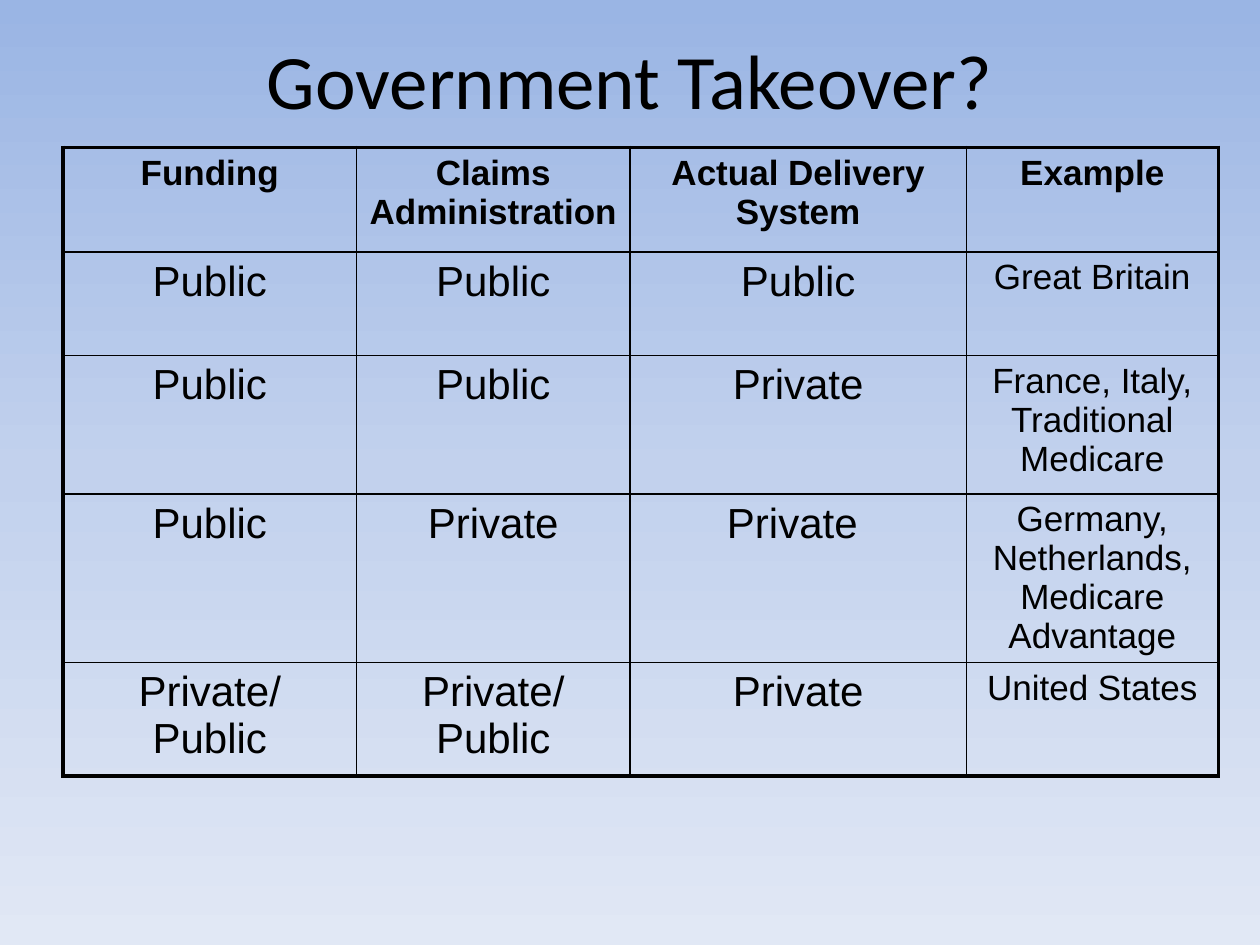
from copy import deepcopy
from typing import NamedTuple

from lxml.etree import SubElement
from pptx import Presentation
from pptx.dml.color import RGBColor
from pptx.enum.text import MSO_ANCHOR, PP_ALIGN
from pptx.oxml.ns import qn
from pptx.util import Inches, Pt

BLACK = RGBColor(0x00, 0x00, 0x00)
SKY = [
    (0.0, RGBColor(0x9A, 0xB5, 0xE4)),
    (0.5, RGBColor(0xC2, 0xD1, 0xED)),
    (1.0, RGBColor(0xE1, 0xE8, 0xF5)),
]
OUTER_LINE, INNER_LINE = Pt(2.25), Pt(1)


class TextStyle(NamedTuple):
    size: int
    bold: bool = False
    name: str = "Arial"


TITLE = TextStyle(44, name="Calibri")
HEADING = TextStyle(20, bold=True)
SECTOR = TextStyle(24)
EXAMPLE = TextStyle(20)

COLUMN_WIDTHS = [2.33, 2.17, 2.67, 2]
ROW_HEIGHTS = [0.83, 0.82, 1.1, 1.1, 0.9]
SYSTEMS = [
    ["Funding", "Claims Administration", "Actual Delivery System", "Example"],
    ["Public", "Public", "Public", "Great Britain"],
    ["Public", "Public", "Private", "France, Italy, Traditional Medicare"],
    ["Public", "Private", "Private ", "Germany, Netherlands, Medicare Advantage"],
    ["Private/ Public", "Private/ Public", "Private", "United States"],
]


def write_text(text_frame, text: str, style: TextStyle) -> None:
    """Put one centred paragraph in the text frame."""
    text_frame.text = text
    paragraph = text_frame.paragraphs[0]
    paragraph.alignment = PP_ALIGN.CENTER
    font = paragraph.runs[0].font
    formats = {"name": style.name, "size": Pt(style.size), "bold": style.bold}
    for attribute, value in formats.items():
        setattr(font, attribute, value)
    font.color.rgb = BLACK


def paint_background(slide) -> None:
    """Fill the background with the sky gradient, top to bottom."""
    fill = slide.background.fill
    fill.gradient()
    fill.gradient_angle = 270
    stop_list = slide.element.find(".//" + qn("a:gsLst"))
    stop_list.insert(1, deepcopy(stop_list[0]))
    for stop, (position, color) in zip(fill.gradient_stops, SKY):
        stop.position = position
        stop.color.rgb = color


def add_border(cell, side: str, width: int) -> None:
    properties = cell._tc.get_or_add_tcPr()
    line = SubElement(properties, qn(f"a:{side}"), w=str(int(width)))
    solid = SubElement(line, qn("a:solidFill"))
    SubElement(solid, qn("a:srgbClr"), val=str(BLACK))


def choose_style(row: int, column: int) -> TextStyle:
    if row == 0:
        return HEADING
    return EXAMPLE if column == len(COLUMN_WIDTHS) - 1 else SECTOR


def add_systems_table(slide) -> None:
    """Draw the comparison table with a heavy outline and thin inner rules."""
    row_count, column_count = len(ROW_HEIGHTS), len(COLUMN_WIDTHS)
    table = slide.shapes.add_table(
        row_count, column_count, Inches(0.5), Inches(1.17),
        Inches(sum(COLUMN_WIDTHS)), Inches(sum(ROW_HEIGHTS)),
    ).table
    table.first_row = table.horz_banding = False
    for column, width in zip(table.columns, COLUMN_WIDTHS):
        column.width = Inches(width)
    for row, height in zip(table.rows, ROW_HEIGHTS):
        row.height = Inches(height)

    for row_index, texts in enumerate(SYSTEMS):
        for column_index, text in enumerate(texts):
            cell = table.cell(row_index, column_index)
            write_text(cell.text_frame, text, choose_style(row_index, column_index))
            is_outer = {
                "lnL": column_index == 0,
                "lnR": column_index == column_count - 1,
                "lnT": row_index == 0,
                "lnB": row_index == row_count - 1,
            }
            for side, outer in is_outer.items():
                add_border(cell, side, OUTER_LINE if outer else INNER_LINE)
            cell.fill.background()


def main() -> None:
    presentation = Presentation()
    presentation.slide_width, presentation.slide_height = Inches(10), Inches(7.5)
    slide = presentation.slides.add_slide(presentation.slide_layouts[5])
    paint_background(slide)

    # Title
    title = slide.shapes.title
    placement = {"left": 0.5, "top": 0, "width": 9, "height": 1.25}
    for attribute, value in placement.items():
        setattr(title, attribute, Inches(value))
    title.text_frame.vertical_anchor = MSO_ANCHOR.MIDDLE
    write_text(title.text_frame, "Government Takeover?", TITLE)

    # Health systems by who funds, administers and delivers
    add_systems_table(slide)
    presentation.save("out.pptx")


if __name__ == "__main__":
    main()
